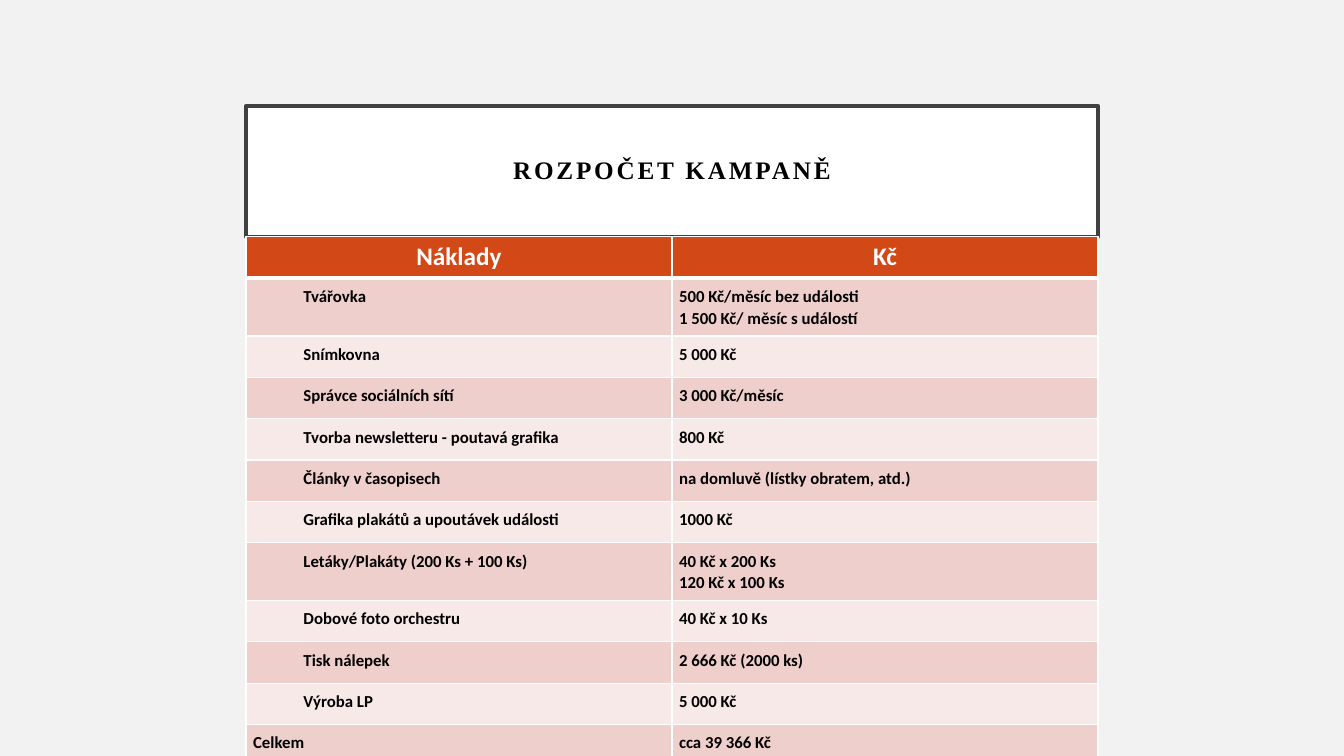
"""Build the campaign budget slide with a framed title and a cost table."""
import dataclasses

import lxml.etree
import pptx
import pptx.dml.color
import pptx.enum.text
import pptx.oxml.ns
import pptx.util

Inches = pptx.util.Inches
Pt = pptx.util.Pt
Align = pptx.enum.text.PP_ALIGN
Anchor = pptx.enum.text.MSO_ANCHOR
qn = pptx.oxml.ns.qn

LEFT, TITLE_TOP, TABLE_TOP = 2.44, 1.05, 2.35
WIDTH, TITLE_HEIGHT = 8.45, 1.3
ROW_HEIGHT, TOTAL_HEIGHT = 0.41, 0.26
BANDS = ("EFCFCC", "F7E9E8")


@dataclasses.dataclass
class Cost:
    item: str
    price: str
    indent: float = 0.5


COSTS = [
    Cost("Tvářovka", "500 Kč/měsíc bez události\n1 500 Kč/ měsíc s událostí"),
    Cost("Snímkovna", "5 000 Kč"),
    Cost("Správce sociálních sítí", "3 000 Kč/měsíc"),
    Cost("Tvorba newsletteru - poutavá grafika", "800 Kč"),
    Cost("Články v časopisech", "na domluvě (lístky obratem, atd.)"),
    Cost("Grafika plakátů a upoutávek události", "1000 Kč"),
    Cost("Letáky/Plakáty (200 Ks + 100 Ks)", "40 Kč x 200 Ks\n120 Kč x 100 Ks"),
    Cost("Dobové foto orchestru", "40 Kč x 10 Ks"),
    Cost("Tisk nálepek", "2 666 Kč (2000 ks)"),
    Cost("Výroba LP", "5 000 Kč"),
    Cost("Celkem", "cca 39 366 Kč", indent=0),
]


def color(value: str) -> pptx.dml.color.RGBColor:
    return pptx.dml.color.RGBColor.from_string(value)


def set_margins(target, size: float) -> None:
    target.margin_left = target.margin_right = Inches(size)
    target.margin_top = target.margin_bottom = Inches(size)


def format_text(frame, font: str, size: float, shade: str, align, spacing: float) -> None:
    for para in frame.paragraphs:
        para.alignment = align
        para.line_spacing = spacing
        for span in para.runs:
            span.font.name = font
            span.font.size = Pt(size)
            span.font.bold = True
            span.font.color.rgb = color(shade)


def set_borders(cell, bottom: float) -> None:
    properties = cell._tc.get_or_add_tcPr()
    widths = {"a:lnL": 1, "a:lnR": 1, "a:lnT": 1, "a:lnB": bottom}
    for position, (tag, width) in enumerate(widths.items()):
        line = lxml.etree.Element(qn(tag), w=str(Pt(width)))
        fill = lxml.etree.SubElement(line, qn("a:solidFill"))
        lxml.etree.SubElement(fill, qn("a:srgbClr"), val="FFFFFF")
        properties.insert(position, line)


def fill_cell(cell, text: str, fill: str, bottom: float = 1) -> None:
    cell.text_frame.text = text
    cell.fill.solid()
    cell.fill.fore_color.rgb = color(fill)
    set_borders(cell, bottom)


def add_title(page) -> None:
    title = page.shapes.title
    title.left, title.top = Inches(LEFT), Inches(TITLE_TOP)
    title.width, title.height = Inches(WIDTH), Inches(TITLE_HEIGHT)
    title.fill.solid()
    title.fill.fore_color.rgb = color("FFFFFF")
    title.line.color.rgb = color("404040")
    title.line.width = Pt(2.5)
    frame = title.text_frame
    frame.text = "ROZPOČET KAMPANĚ"
    frame.word_wrap = True
    frame.vertical_anchor = Anchor.MIDDLE
    set_margins(frame, 0.2)
    format_text(frame, "Times New Roman", 18, "000000", Align.CENTER, 0.9)
    frame.paragraphs[0].runs[0].font._element.set("spc", "200")


def add_costs(page) -> None:
    heights = [ROW_HEIGHT] * len(COSTS) + [TOTAL_HEIGHT]
    table = page.shapes.add_table(
        len(heights), 2, Inches(LEFT), Inches(TABLE_TOP), Inches(WIDTH), Inches(sum(heights))
    ).table
    for row, height in zip(table.rows, heights):
        row.height = Inches(height)
    for column, heading in enumerate(("Náklady", "Kč")):
        cell = table.cell(0, column)
        fill_cell(cell, heading, "D34817", bottom=3)
        format_text(cell.text_frame, "Calibri", 18, "FFFFFF", Align.CENTER, 1.0)
    for number, cost in enumerate(COSTS):
        for column, text in enumerate((cost.item, cost.price)):
            cell = table.cell(number + 1, column)
            fill_cell(cell, text, BANDS[number % 2])
            set_margins(cell, 0.07)
            format_text(cell.text_frame, "Calibri", 12, "000000", Align.JUSTIFY, 1.07)
        if cost.indent:
            para = table.cell(number + 1, 0).text_frame.paragraphs[0]
            para._p.get_or_add_pPr().set("marL", str(Inches(cost.indent)))


def main() -> None:
    deck = pptx.Presentation()
    deck.slide_width, deck.slide_height = Inches(13.33), Inches(7.5)
    page = deck.slides.add_slide(deck.slide_layouts.get_by_name("Title Only"))
    page.background.fill.solid()
    page.background.fill.fore_color.rgb = color("F2F2F2")
    add_title(page)
    add_costs(page)
    deck.save("out.pptx")


if __name__ == "__main__":
    main()
